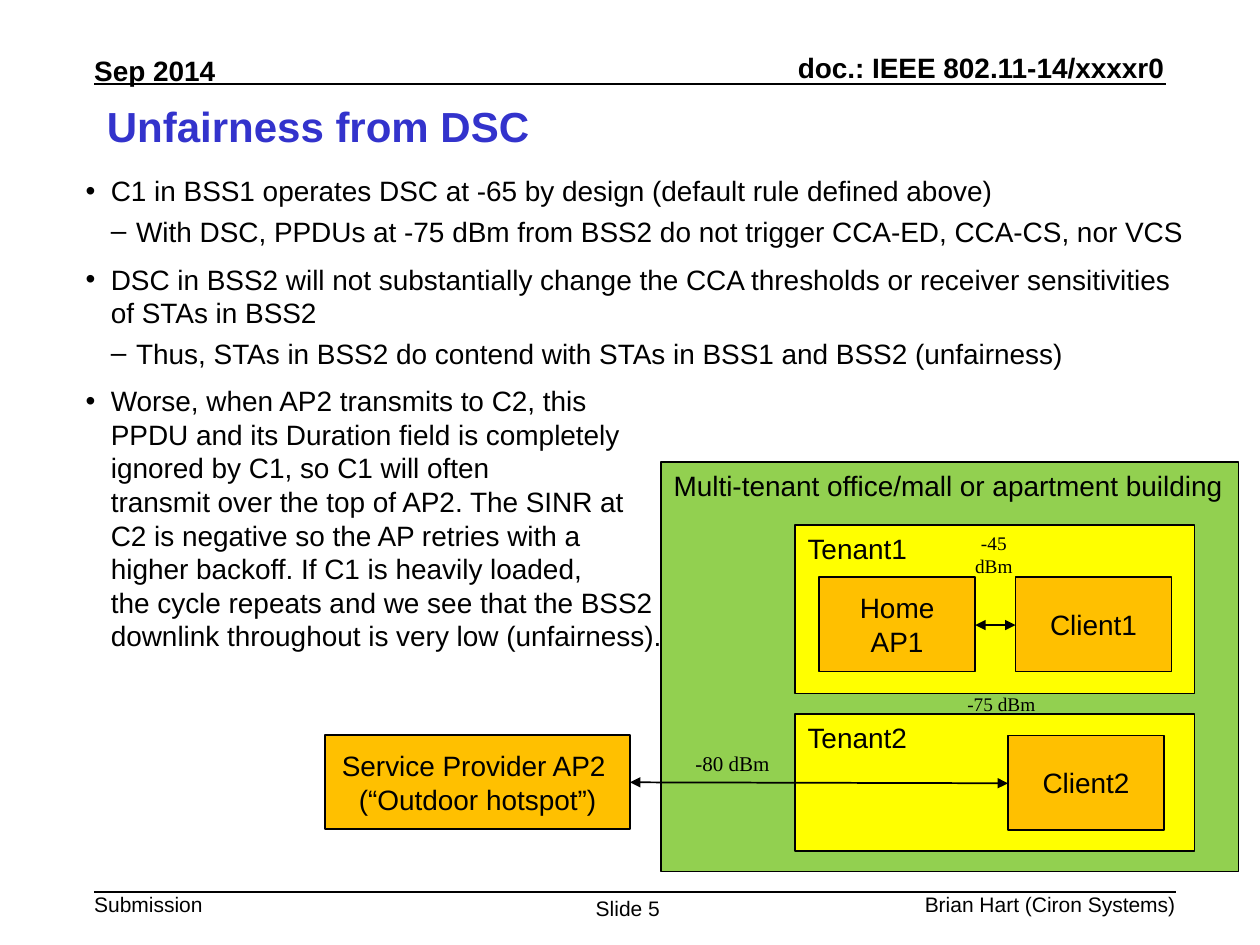
"""Build the slide on unfairness from DSC in a multi-tenant building."""
from pptx import Presentation
from pptx import util as u
from pptx.dml.color import RGBColor
from pptx.enum import shapes, text
from pptx.oxml.ns import qn
from lxml import etree

BLACK = RGBColor(0x00, 0x00, 0x00)
BLUE = RGBColor(0x33, 0x33, 0xCC)
GREEN = RGBColor(0x92, 0xD0, 0x50)
YELLOW = RGBColor(0xFF, 0xFF, 0x00)
ORANGE = RGBColor(0xFF, 0xC0, 0x00)
LEFT, CENTER, RIGHT = text.PP_ALIGN.LEFT, text.PP_ALIGN.CENTER, text.PP_ALIGN.RIGHT
TOP, MIDDLE = text.MSO_ANCHOR.TOP, text.MSO_ANCHOR.MIDDLE


def write(box, words, size, align=LEFT, font="Arial", bold=False, color=BLACK, anchor=TOP):
    frame = box.text_frame
    frame.word_wrap = True
    frame.auto_size = text.MSO_AUTO_SIZE.NONE
    frame.vertical_anchor = anchor
    para = frame.paragraphs[0]
    para.text = words
    para.alignment = align
    para.font.name, para.font.size = font, u.Pt(size)
    para.font.bold, para.font.color.rgb = bold, color


def draw_line(x1, y1, x2, y2, arrows=False):
    line = page.shapes.add_connector(
        shapes.MSO_CONNECTOR.STRAIGHT, u.Cm(x1), u.Cm(y1), u.Cm(x2), u.Cm(y2))
    line.line.color.rgb = BLACK
    line.line.width = u.Pt(1)
    properties = line.element.spPr
    etree.SubElement(properties, qn("a:effectLst"))
    if arrows:
        for end in ("a:headEnd", "a:tailEnd"):
            etree.SubElement(properties.find(qn("a:ln")), qn(end), type="triangle")


deck = Presentation()
deck.slide_width, deck.slide_height = u.Cm(25.4), u.Cm(19.05)
page = deck.slides.add_slide(deck.slide_layouts[1])

running_texts = [
    ("doc.: IEEE 802.11-14/xxxxr0", 14.71, 1.02, 8.76, 0.69, 16, RIGHT, True),
    ("Sep 2014", 1.9, 1.07, 2.6, 0.69, 16, LEFT, True),
    ("Submission", 1.9, 17.98, 2.3, 0.51, 12, LEFT, False),
    ("Slide 5", 12.01, 18.06, 1.65, 0.51, 12, LEFT, False),
    ("Brian Hart (Ciron Systems)", 18.4, 17.98, 5.3, 0.51, 12, RIGHT, False),
]
for words, left, top, width, height, size, align, bold in running_texts:
    box = page.shapes.add_textbox(u.Cm(left), u.Cm(top), u.Cm(width), u.Cm(height))
    write(box, words, size, align, bold=bold)
    frame = box.text_frame
    frame.margin_left = frame.margin_right = frame.margin_top = frame.margin_bottom = 0
draw_line(1.9, 1.7, 23.5, 1.7)
draw_line(1.9, 17.98, 23.7, 17.98)

title = page.shapes.title
title.left, title.top, title.width, title.height = u.Cm(1.9), u.Cm(1.9), u.Cm(21.6), u.Cm(2.97)
write(title, "Unfairness from DSC", 24, bold=True, color=BLUE)

blocks = [
    ("Multi-tenant office/mall or apartment building", 13.33, 9.32, 11.64, 8.25, GREEN),
    ("Service Provider AP2 \n(“Outdoor hotspot”)", 6.56, 14.82, 6.14, 1.9, ORANGE),
    ("Tenant2", 16.03, 14.4, 8.05, 2.75, YELLOW),
    ("Client2", 20.32, 14.83, 3.15, 1.9, ORANGE),
    ("Tenant1", 16.03, 10.59, 8.05, 3.39, YELLOW),
    ("Client1", 20.47, 11.64, 3.15, 1.9, ORANGE),
    ("Home AP1", 16.51, 11.64, 3.15, 1.9, ORANGE),
]
for words, left, top, width, height, fill in blocks:
    block = page.shapes.add_shape(
        shapes.MSO_SHAPE.RECTANGLE, u.Cm(left), u.Cm(top), u.Cm(width), u.Cm(height))
    block.shadow.inherit = False
    block.fill.solid()
    block.fill.fore_color.rgb = fill
    block.line.color.rgb = BLACK
    block.line.width = u.Pt(1)
    is_device = fill == ORANGE
    write(block, words, 16, CENTER if is_device else LEFT, anchor=MIDDLE if is_device else TOP)

draw_line(19.66, 12.6, 20.47, 12.6, arrows=True)
draw_line(20.32, 15.79, 12.7, 15.77, arrows=True)

signal_levels = [
    ("-45 dBm", 19.35, 10.59, 1.37, 1.19, 11, CENTER),
    ("-75 dBm", 19.25, 13.84, 2.11, 0.74, 11, LEFT),
    ("-80 dBm", 13.77, 15.01, 2.11, 0.76, 12, LEFT),
]
for words, left, top, width, height, size, align in signal_levels:
    box = page.shapes.add_textbox(u.Cm(left), u.Cm(top), u.Cm(width), u.Cm(height))
    write(box, words, size, align, font="Times New Roman")

points = [
    (0, "C1 in BSS1 operates DSC at -65 by design (default rule defined above)"),
    (1, "With DSC, PPDUs at -75 dBm from BSS2 do not trigger CCA-ED, CCA-CS, nor VCS"),
    (0, "DSC in BSS2 will not substantially change the CCA thresholds or receiver "
        "sensitivities of STAs in BSS2"),
    (1, "Thus, STAs in BSS2 do contend with STAs in BSS1 and BSS2 (unfairness)"),
    (0, "Worse, when AP2 transmits to C2, this\n"
        "PPDU and its Duration field is completely\n"
        "ignored by C1, so C1 will often\n"
        "transmit over the top of AP2. The SINR at\n"
        "C2 is negative so the AP retries with a\n"
        "higher backoff. If C1 is heavily loaded,\n"
        "the cycle repeats and we see that the BSS2\n"
        "downlink throughout is very low (unfairness)."),
]
body = page.placeholders[1]
body.left, body.top, body.width, body.height = u.Cm(1.47), u.Cm(3.38), u.Cm(22.86), u.Cm(14.17)
body.element.getparent().append(body.element)
frame = body.text_frame
frame.word_wrap = True
frame.auto_size = text.MSO_AUTO_SIZE.NONE
for index, (level, words) in enumerate(points):
    para = frame.add_paragraph() if index else frame.paragraphs[0]
    para.text = words
    para.level = level
    para.space_before = u.Pt((8, 4)[level] if index else 0)
    settings = para._p.get_or_add_pPr()
    settings.set("marL", str(u.Cm(0.51 * (level + 1))))
    settings.set("indent", str(u.Cm(-0.51)))
    etree.SubElement(settings, qn("a:buChar"), char="•–"[level])
    para.font.name, para.font.size = "Arial", u.Pt(16)
    para.font.color.rgb = BLACK

deck.save("out.pptx")
